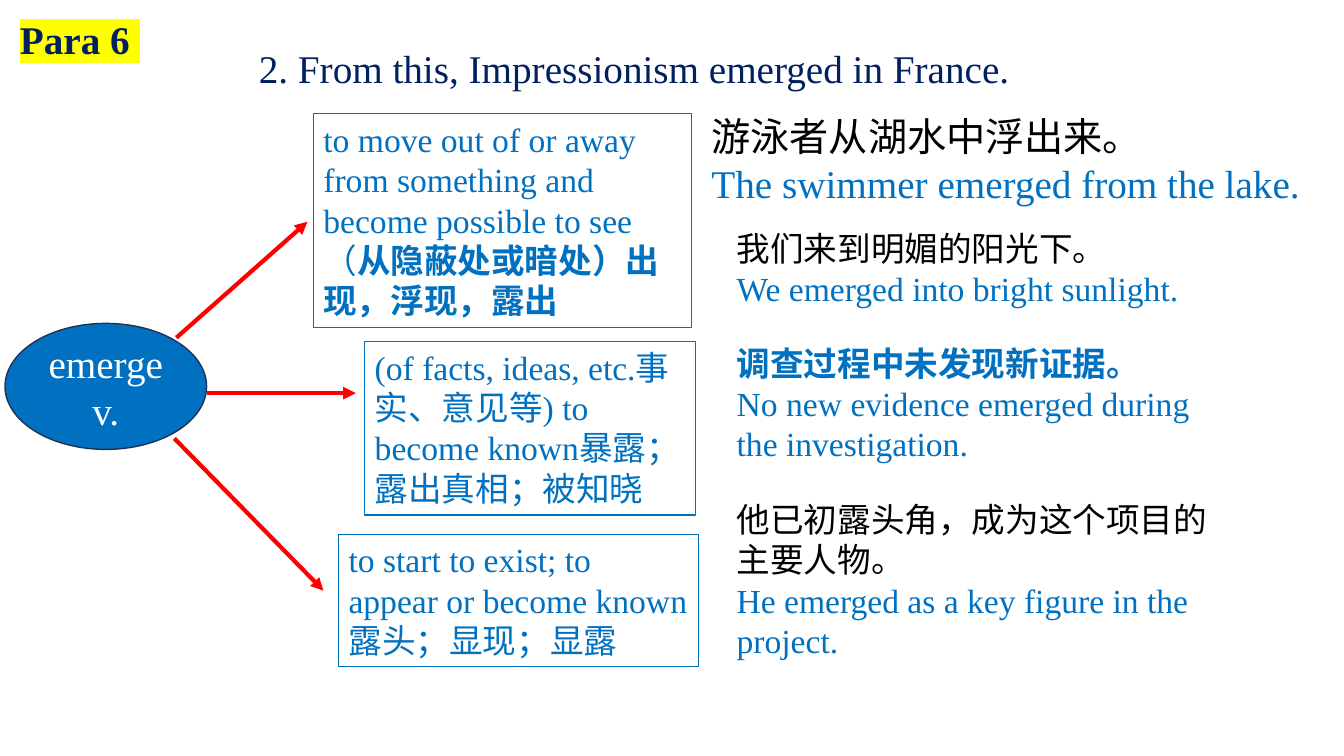
import pptx
import pptx.util
import pptx.dml.color
import pptx.enum.shapes
import pptx.enum.text
import pptx.oxml
import pptx.oxml.ns

Pt = pptx.util.Pt
RGBColor = pptx.dml.color.RGBColor
MSO_SHAPE = pptx.enum.shapes.MSO_SHAPE
MSO_CONNECTOR = pptx.enum.shapes.MSO_CONNECTOR
PP_ALIGN = pptx.enum.text.PP_ALIGN
MSO_ANCHOR = pptx.enum.text.MSO_ANCHOR
MSO_AUTO_SIZE = pptx.enum.text.MSO_AUTO_SIZE

NAVY = RGBColor(0x00, 0x20, 0x60)
BLUE = RGBColor(0x00, 0x70, 0xC0)
EDGE = RGBColor(0x1E, 0x32, 0x56)
RED = RGBColor(0xFF, 0x00, 0x00)
BLACK = RGBColor(0x00, 0x00, 0x00)
WHITE = RGBColor(0xFF, 0xFF, 0xFF)
YELLOW = RGBColor(0xFF, 0xFF, 0x00)
LATIN = "Times New Roman"
HAN = "Noto Sans CJK SC"


def element(tag, **attrs):
    el = pptx.oxml.parse_xml(f"<a:{tag} {pptx.oxml.ns.nsdecls('a')}/>")
    for name, value in attrs.items():
        el.set(name, value)
    return el


def text(content, size=24, font=LATIN, color=BLUE, bold=False, highlight=None):
    return dict(content=content, size=size, font=font, color=color,
                bold=bold, highlight=highlight)


class VocabularySlide:
    def __init__(self, prs):
        self.s = prs.slides.add_slide(prs.slide_layouts[6])

    def set_text(self, sp, paragraphs, align=PP_ALIGN.LEFT, anchor=MSO_ANCHOR.TOP,
                 fit=MSO_AUTO_SIZE.SHAPE_TO_FIT_TEXT):
        tf = sp.text_frame
        tf.word_wrap = True
        tf.auto_size = fit
        tf.vertical_anchor = anchor
        for i, runs in enumerate(paragraphs):
            p = tf.add_paragraph() if i else tf.paragraphs[0]
            p.alignment = align
            for style in runs:
                self.add_run(p, **style)

    def add_run(self, p, content, size, font, color, bold, highlight):
        r = p.add_run()
        r.text = content
        r.font.size = Pt(size)
        r.font.bold = bold
        r.font.name = font
        r.font.color.rgb = color
        latin = r.font._element.find(pptx.oxml.ns.qn("a:latin"))
        latin.addnext(element("ea", typeface=HAN))
        if highlight is not None:
            mark = element("highlight")
            mark.append(element("srgbClr", val=str(highlight)))
            latin.addprevious(mark)

    def text_box(self, x, y, w, h, *paragraphs):
        sp = self.s.shapes.add_textbox(Pt(x), Pt(y), Pt(w), Pt(h))
        self.set_text(sp, paragraphs)

    def shape(self, kind, x, y, w, h, line, width, fill=None):
        sp = self.s.shapes.add_shape(kind, Pt(x), Pt(y), Pt(w), Pt(h))
        sp.shadow.inherit = False
        sp.line.color.rgb = line
        sp.line.width = Pt(width)
        if fill is None:
            sp.fill.background()
        else:
            sp.fill.solid()
            sp.fill.fore_color.rgb = fill
        return sp

    def meaning(self, x, y, w, h, *paragraphs):
        sp = self.shape(MSO_SHAPE.RECTANGLE, x, y, w, h, BLUE, 0.75)
        self.set_text(sp, paragraphs)

    def headword(self, x, y, w, h, word):
        sp = self.shape(MSO_SHAPE.OVAL, x, y, w, h, EDGE, 1, BLUE)
        self.set_text(sp, [[text(word, size=28, color=WHITE)]], PP_ALIGN.CENTER,
                      MSO_ANCHOR.MIDDLE, MSO_AUTO_SIZE.NONE)

    def arrow(self, x1, y1, x2, y2):
        c = self.s.shapes.add_connector(MSO_CONNECTOR.STRAIGHT,
                                        Pt(x1), Pt(y1), Pt(x2), Pt(y2))
        c.line.color.rgb = RED
        c.line.width = Pt(3)
        c.line._get_or_add_ln().append(element("tailEnd", type="triangle"))
        c._element.spPr.append(element("effectLst"))

    def example(self, x, y, w, h, chinese, english, size=24, color=BLACK, bold=False):
        self.text_box(x, y, w, h,
                      [text(chinese, size=size, font=HAN, color=color, bold=bold)],
                      [text(english, size=size)])


def main():
    prs = pptx.Presentation()
    prs.slide_width, prs.slide_height = Pt(960), Pt(540)
    slide = VocabularySlide(prs)

    # Headings
    slide.text_box(7.2, 7.2, 110.9, 41,
                   [text("Para 6 ", size=28, color=NAVY, bold=True, highlight=YELLOW)])
    slide.text_box(177.8, 28.1, 760, 41,
                   [text("2. From this, Impressionism emerged in France.",
                         size=28, color=NAVY)])

    # Headword and its arrows
    slide.headword(3.6, 231, 144, 90, "emerge v.")
    slide.arrow(126, 241.2, 219.6, 158.4)
    slide.arrow(147.6, 280.8, 254.2, 280.8)
    slide.arrow(124.6, 313.2, 231.1, 421.9)

    # Meanings
    slide.meaning(223.9, 81.4, 270, 152.6,
                  [text("to move out of or away from something and become possible to see （"),
                   text("从隐蔽处或暗处）出现，浮现，露出", font=HAN, bold=True)])
    slide.meaning(260.6, 244.1, 236.2, 123.8,
                  [text("(of facts, ideas, etc.事实、意见等) to become known暴露；露出真相；被知晓")])
    slide.meaning(241.9, 381.6, 257, 94.3,
                  [text("to start to exist; to appear or become known")],
                  [text("露头；显现；显露")])

    # Example sentences
    slide.example(501.1, 77, 437.8, 74.9, "游泳者从湖水中浮出来。",
                  "The swimmer emerged from the lake.", size=28)
    slide.example(519.1, 159.1, 419.8, 65.5, "我们来到明媚的阳光下。",
                  "We emerged into bright sunlight.")
    slide.example(519.1, 241.2, 351.4, 94.3, "调查过程中未发现新证据。",
                  "No new evidence emerged during the investigation.",
                  color=BLUE, bold=True)
    slide.example(519.1, 352.8, 367.2, 123.8, "他已初露头角，成为这个项目的主要人物。",
                  "He emerged as a key figure in the project.")

    prs.save("out.pptx")


if __name__ == "__main__":
    main()
